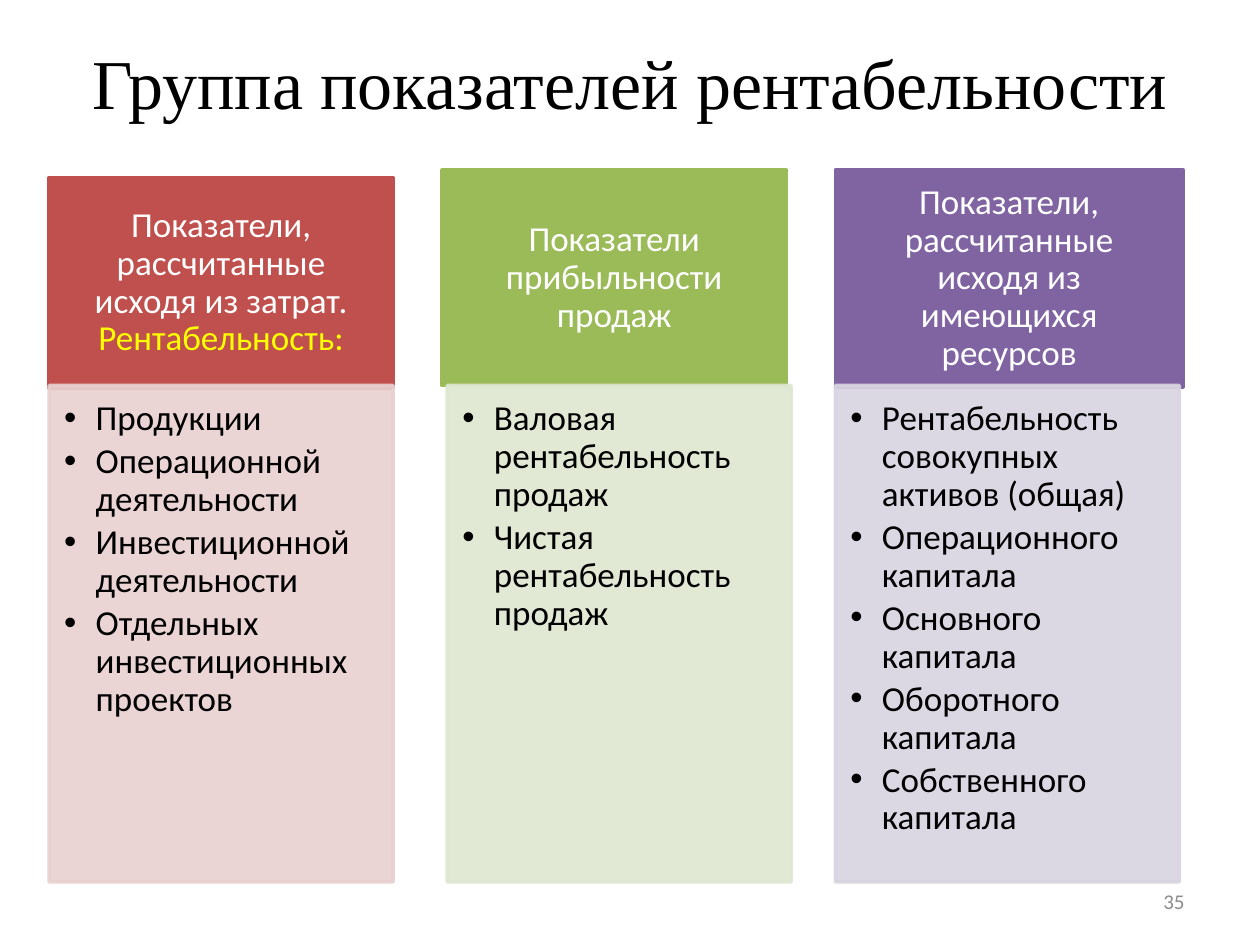
from lxml.etree import SubElement
from pptx import Presentation
from pptx.dml.color import RGBColor
from pptx.enum.shapes import MSO_SHAPE
from pptx.enum.text import MSO_ANCHOR, PP_ALIGN
from pptx.oxml.ns import qn
from pptx.util import Pt

PX = 9144  # 100 px to the inch
COLUMN_WIDTH = 273
LIST_TOP, LIST_HEIGHT = 306, 394

COLUMNS = [
    {
        "header_box": (39, 141, COLUMN_WIDTH, 167),
        "list_left": 39,
        "dark": "C0504D",
        "light": "E8D0D0",
        "header": [("Показатели, рассчитанные исходя из затрат. ", "FFFFFF"),
                   ("Рентабельность:", "FFFF00")],
        "items": ["Продукции", "Операционной деятельности",
                  "Инвестиционной деятельности",
                  "Отдельных инвестиционных проектов"],
    },
    {
        "header_box": (351, 135, COLUMN_WIDTH, 171),
        "list_left": 355,
        "dark": "9BBB59",
        "light": "DEE7D1",
        "header": [("Показатели прибыльности продаж", "FFFFFF")],
        "items": ["Валовая рентабельность продаж",
                  "Чистая рентабельность продаж"],
    },
    {
        "header_box": (663, 135, 276, 172),
        "list_left": 663,
        "dark": "8064A2",
        "light": "D8D3E0",
        "header": [("Показатели, рассчитанные исходя из имеющихся ресурсов", "FFFFFF")],
        "items": ["Рентабельность совокупных активов (общая)",
                  "Операционного капитала", "Основного капитала",
                  "Оборотного капитала", "Собственного капитала"],
    },
]


def emu(box):
    return [length * PX for length in box]


def color(hex_string):
    return RGBColor.from_string(hex_string)


def style(span, size, hex_string, font="Calibri"):
    span.font.size = Pt(size)
    span.font.name = font
    span.font.color.rgb = color(hex_string)


def set_margins(frame, left, top, right, bottom):
    frame.margin_left, frame.margin_top, frame.margin_right, frame.margin_bottom = emu(
        (left, top, right, bottom))


def add_panel(page, box, hex_string):
    panel = page.shapes.add_shape(MSO_SHAPE.RECTANGLE, *emu(box))
    panel.shadow.inherit = False
    panel.fill.solid()
    panel.fill.fore_color.rgb = color(hex_string)
    panel.line.color.rgb = color(hex_string)
    panel.line.width = Pt(2)
    panel.text_frame.word_wrap = True
    return panel


def make_translucent(panel, percent):
    for solid in panel.element.spPr.iter(qn("a:solidFill")):
        SubElement(solid[0], qn("a:alpha"), val=str(percent * 1000))


def add_bullet(para):
    properties = para._p.get_or_add_pPr()
    properties.set("marL", str(25 * PX))
    properties.set("indent", str(-25 * PX))
    SubElement(properties, qn("a:buFont"), typeface="Arial")
    SubElement(properties, qn("a:buChar"), char="•")


def add_title(page, box):
    title = page.shapes.title
    title.left, title.top, title.width, title.height = emu(box)
    frame = title.text_frame
    frame.text = "Группа показателей рентабельности"
    frame.vertical_anchor = MSO_ANCHOR.MIDDLE
    para = frame.paragraphs[0]
    para.alignment = PP_ALIGN.CENTER
    style(para.runs[0], 40, "000000", "Times New Roman")


def add_header(page, box, hex_string, parts):
    frame = add_panel(page, box, hex_string).text_frame
    frame.vertical_anchor = MSO_ANCHOR.MIDDLE
    set_margins(frame, 16, 9, 16, 9)
    para = frame.paragraphs[0]
    para.alignment = PP_ALIGN.CENTER
    para.line_spacing = 0.9
    for text, text_color in parts:
        span = para.add_run()
        span.text = text
        style(span, 20, text_color)


def add_list(page, box, hex_string, items):
    panel = add_panel(page, box, hex_string)
    make_translucent(panel, 90)
    frame = panel.text_frame
    frame.vertical_anchor = MSO_ANCHOR.TOP
    set_margins(frame, 12, 12, 16, 17)
    frame.text = "\n".join(items)
    for para in frame.paragraphs:
        para.level = 1
        para.alignment = PP_ALIGN.LEFT
        para.line_spacing = 0.9
        para.space_after = Pt(3)
        add_bullet(para)
        style(para.runs[0], 20, "000000")


def add_page_number(page, box, number):
    frame = page.shapes.add_textbox(*emu(box)).text_frame
    frame.word_wrap = True
    frame.vertical_anchor = MSO_ANCHOR.MIDDLE
    frame.text = str(number)
    para = frame.paragraphs[0]
    para.alignment = PP_ALIGN.RIGHT
    style(para.runs[0], 12, "8C8C8C")


def main():
    deck = Presentation()
    deck.slide_width, deck.slide_height = emu((1000, 750))
    page = deck.slides.add_slide(deck.slide_layouts[5])
    add_title(page, (50, 30, 900, 69))
    for column in COLUMNS:
        add_header(page, column["header_box"], column["dark"], column["header"])
        list_box = (column["list_left"], LIST_TOP, COLUMN_WIDTH, LIST_HEIGHT)
        add_list(page, list_box, column["light"], column["items"])
    add_page_number(page, (717, 695, 233, 40), 35)
    deck.save("out.pptx")


if __name__ == "__main__":
    main()
